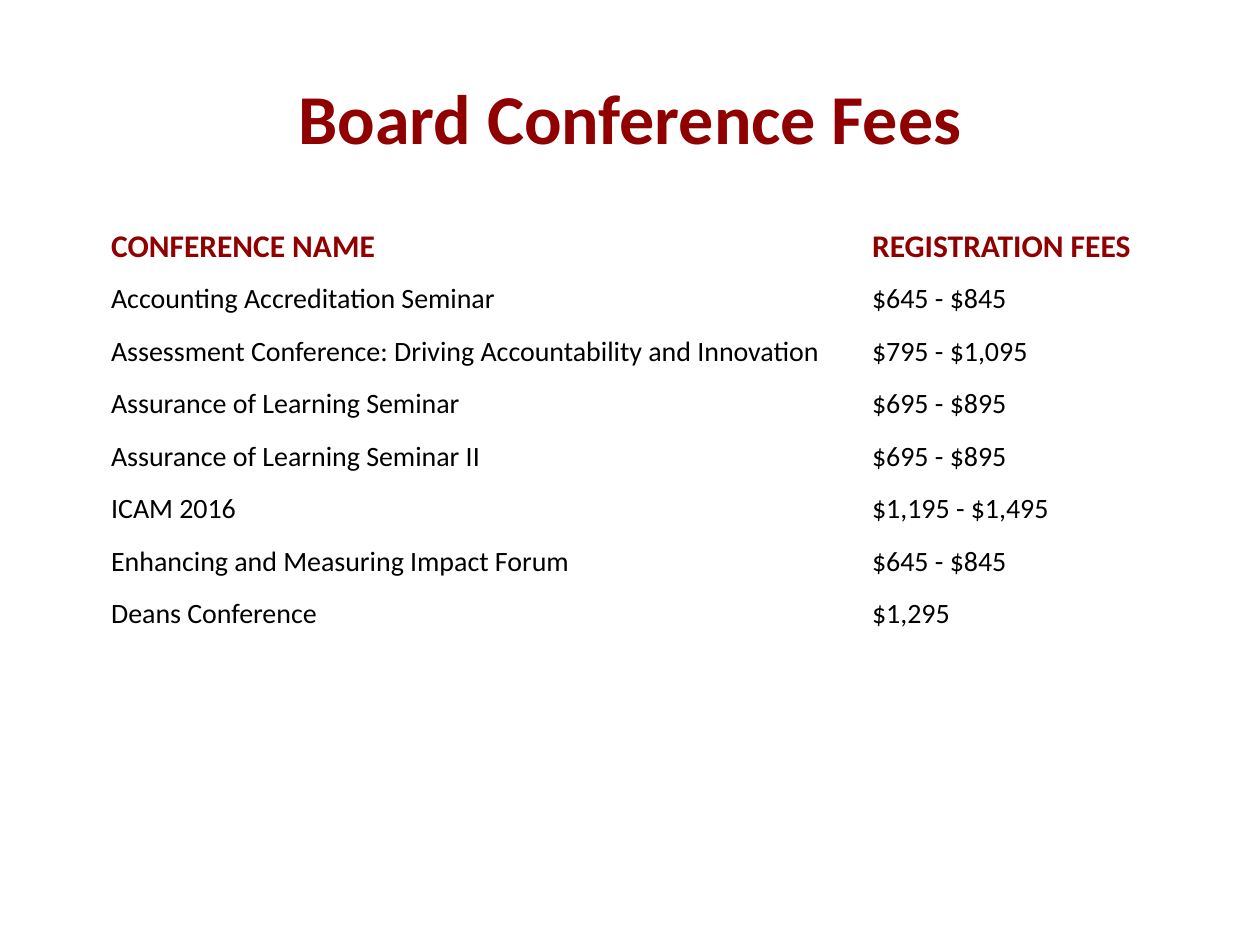
from typing import NamedTuple

from lxml.etree import SubElement
from pptx import Presentation
from pptx.dml.color import RGBColor
from pptx.enum.text import MSO_ANCHOR as Anchor, PP_ALIGN as Align
from pptx.oxml.ns import qn
from pptx.slide import Slide
from pptx.table import _Cell as Cell
from pptx.text.text import _Paragraph as Paragraph
from pptx.util import Cm, Pt

COLORS = {"heading": "900000", "body": "000000", "background": "FFFFFF"}
FONT = "Calibri"


class TextStyle(NamedTuple):
    size: int
    color: str
    bold: bool


class Conference(NamedTuple):
    name: str
    fees: str


TITLE_STYLE = TextStyle(40, "heading", True)
HEADER_STYLE = TextStyle(18, "heading", True)
BODY_STYLE = TextStyle(16, "body", False)

HEADER = Conference("CONFERENCE NAME", "REGISTRATION FEES")
CONFERENCES = [
    Conference("Accounting Accreditation Seminar", "$645 - $845"),
    Conference("Assessment Conference: Driving Accountability and Innovation", "$795 - $1,095"),
    Conference("Assurance of Learning Seminar", "$695 - $895"),
    Conference("Assurance of Learning Seminar II", "$695 - $895"),
    Conference("ICAM 2016", "$1,195 - $1,495"),
    Conference("Enhancing and Measuring Impact Forum", "$645 - $845"),
    Conference("Deans Conference", "$1,295"),
]
COLUMN_WIDTHS = (Cm(15.34), Cm(5.99))
ROW_HEIGHT = Cm(1.06)


def add_run(paragraph: Paragraph, text: str, style: TextStyle) -> None:
    run = paragraph.add_run()
    run.text = text
    run.font.name = FONT
    run.font.size = Pt(style.size)
    run.font.bold = style.bold
    run.font.color.rgb = RGBColor.from_string(COLORS[style.color])


def add_borders(cell: Cell) -> None:
    properties = cell._tc.get_or_add_tcPr()
    for position, side in enumerate(("lnL", "lnR", "lnT", "lnB")):
        line = properties.makeelement(qn(f"a:{side}"), {"w": str(Pt(1))})
        properties.insert(position, line)
        fill = SubElement(line, qn("a:solidFill"))
        SubElement(fill, qn("a:srgbClr"), val=COLORS["background"])


def fill_cell(cell: Cell, text: str, style: TextStyle) -> None:
    cell.margin_left = cell.margin_right = cell.margin_top = Cm(0.03)
    cell.margin_bottom = 0
    cell.vertical_anchor = Anchor.MIDDLE
    cell.fill.solid()
    cell.fill.fore_color.rgb = RGBColor.from_string(COLORS["background"])
    add_borders(cell)
    add_run(cell.text_frame.paragraphs[0], text, style)


def add_title(slide: Slide, text: str) -> None:
    title = slide.shapes.title
    title.left, title.top = Cm(1.27), Cm(0.76)
    title.width, title.height = Cm(22.86), Cm(3.18)
    title.text_frame.vertical_anchor = Anchor.MIDDLE
    heading = title.text_frame.paragraphs[0]
    heading.alignment = Align.CENTER
    add_run(heading, text, TITLE_STYLE)


def add_fee_table(slide: Slide) -> None:
    entries = [HEADER, *CONFERENCES]
    table = slide.shapes.add_table(
        len(entries), len(COLUMN_WIDTHS), Cm(2.21), Cm(4.42),
        sum(COLUMN_WIDTHS), ROW_HEIGHT * len(entries),
    ).table
    table.horz_banding = False
    for column, width in zip(table.columns, COLUMN_WIDTHS):
        column.width = width
    for row, entry in zip(table.rows, entries):
        row.height = ROW_HEIGHT
        style = HEADER_STYLE if entry is HEADER else BODY_STYLE
        for cell, text in zip(row.cells, entry):
            fill_cell(cell, text, style)


def main() -> None:
    presentation = Presentation()
    presentation.slide_width, presentation.slide_height = Cm(25.4), Cm(19.05)
    slide = presentation.slides.add_slide(presentation.slide_layouts.get_by_name("Title Only"))
    add_title(slide, "Board Conference Fees")
    add_fee_table(slide)
    presentation.save("out.pptx")


if __name__ == "__main__":
    main()
